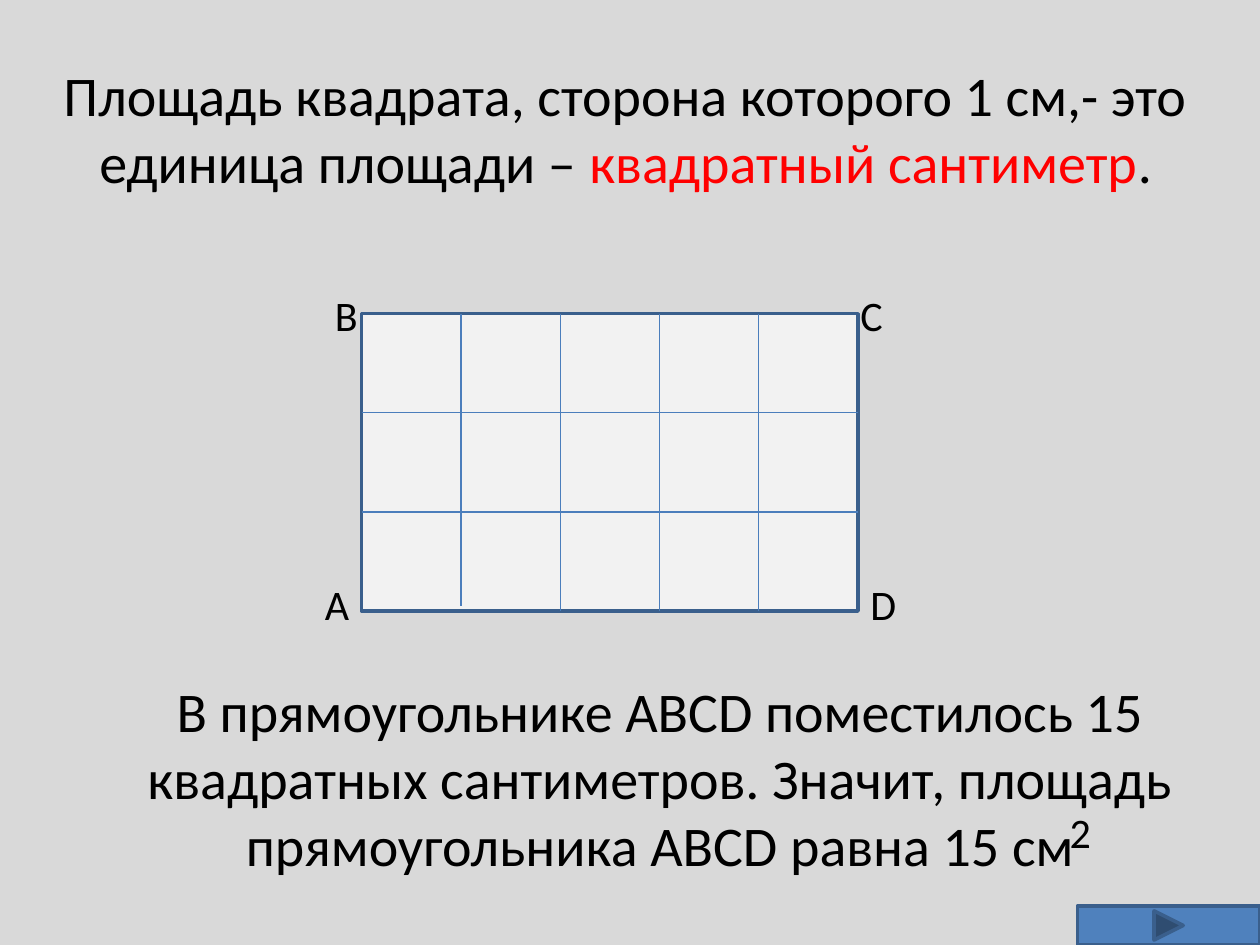
from pptx import Presentation
from pptx.dml.color import RGBColor
from pptx.enum.shapes import MSO_CONNECTOR, MSO_SHAPE
from pptx.enum.text import MSO_ANCHOR, PP_ALIGN
from pptx.oxml.ns import qn
from pptx.util import Inches, Pt
from lxml.etree import SubElement


def rgb(value):
    return RGBColor.from_string(value)


def add_run(p, text, size=32, color="000000"):
    r = p.add_run()
    r.text = text
    r.font.name = "Calibri"
    r.font.size = Pt(size)
    r.font.color.rgb = rgb(color)


prs = Presentation()
prs.slide_width, prs.slide_height = Inches(10), Inches(7.5)
s = prs.slides.add_slide(prs.slide_layouts[5])
s.background.fill.solid()
s.background.fill.fore_color.rgb = rgb("D9D9D9")

# Title
title = s.shapes.title
title.left, title.top = Inches(0.2), Inches(0.21)
title.width, title.height = Inches(9.53), Inches(1.61)
tf = title.text_frame
tf.word_wrap = True
tf.vertical_anchor = MSO_ANCHOR.MIDDLE
p = tf.paragraphs[0]
p.alignment = PP_ALIGN.CENTER
add_run(p, "Площадь квадрата, сторона которого 1 см,- это единица площади – ")
add_run(p, "квадратный сантиметр", color="FF0000")
add_run(p, ".")

# Rectangle ABCD and the forward button
left, top, width, height = 2.87, 2.49, 3.94, 2.36
for kind, box, fill in [
    (MSO_SHAPE.RECTANGLE, (left, top, width, height), "F2F2F2"),
    (MSO_SHAPE.ACTION_BUTTON_FORWARD_OR_NEXT, (8.55, 7.19, 1.45, 0.31), "4F81BD"),
]:
    sp = s.shapes.add_shape(kind, *[Inches(v) for v in box])
    sp.shadow.inherit = False
    sp.fill.solid()
    sp.fill.fore_color.rgb = rgb(fill)
    sp.line.color.rgb = rgb("3A5F8C")
    sp.line.width = Pt(2)

# Grid of 5 by 3 unit squares; the first vertical stops a little short
cols, rows = 5, 3
right, bottom = left + width, top + height
lines = []
for i in range(1, cols):
    x = left + i * width / cols
    lines.append((x, top, x, bottom - 0.04 if i == 1 else bottom))
for i in range(1, rows):
    y = top + i * height / rows
    lines.append((left, y, right, y))
for ends in lines:
    line = s.shapes.add_connector(MSO_CONNECTOR.STRAIGHT, *[Inches(v) for v in ends])
    line.line.color.rgb = rgb("4B7EBC")
    line.line.width = Pt(0.75)
    SubElement(line._element.spPr, qn("a:effectLst"))

# Conclusion, corner letters and the exponent
conclusion = ("В прямоугольнике ABCD поместилось 15 квадратных сантиметров. "
              "Значит, площадь прямоугольника ABCD равна 15 см")
for text, box, size, align in [
    (conclusion, (0.83, 5.32, 8.82, 1.72), 32, PP_ALIGN.CENTER),
    ("A", (2.48, 4.54, 0.31, 0.5), 24, PP_ALIGN.LEFT),
    ("B", (2.56, 2.25, 0.31, 0.5), 24, PP_ALIGN.LEFT),
    ("D", (6.81, 4.54, 0.31, 0.5), 24, PP_ALIGN.LEFT),
    ("C", (6.73, 2.25, 0.31, 0.5), 24, PP_ALIGN.LEFT),
    ("2", (8.39, 6.35, 0.39, 0.5), 24, PP_ALIGN.LEFT),
]:
    tf = s.shapes.add_textbox(*[Inches(v) for v in box]).text_frame
    tf.word_wrap = True
    p = tf.paragraphs[0]
    p.alignment = align
    add_run(p, text, size=size)

prs.save("out.pptx")
